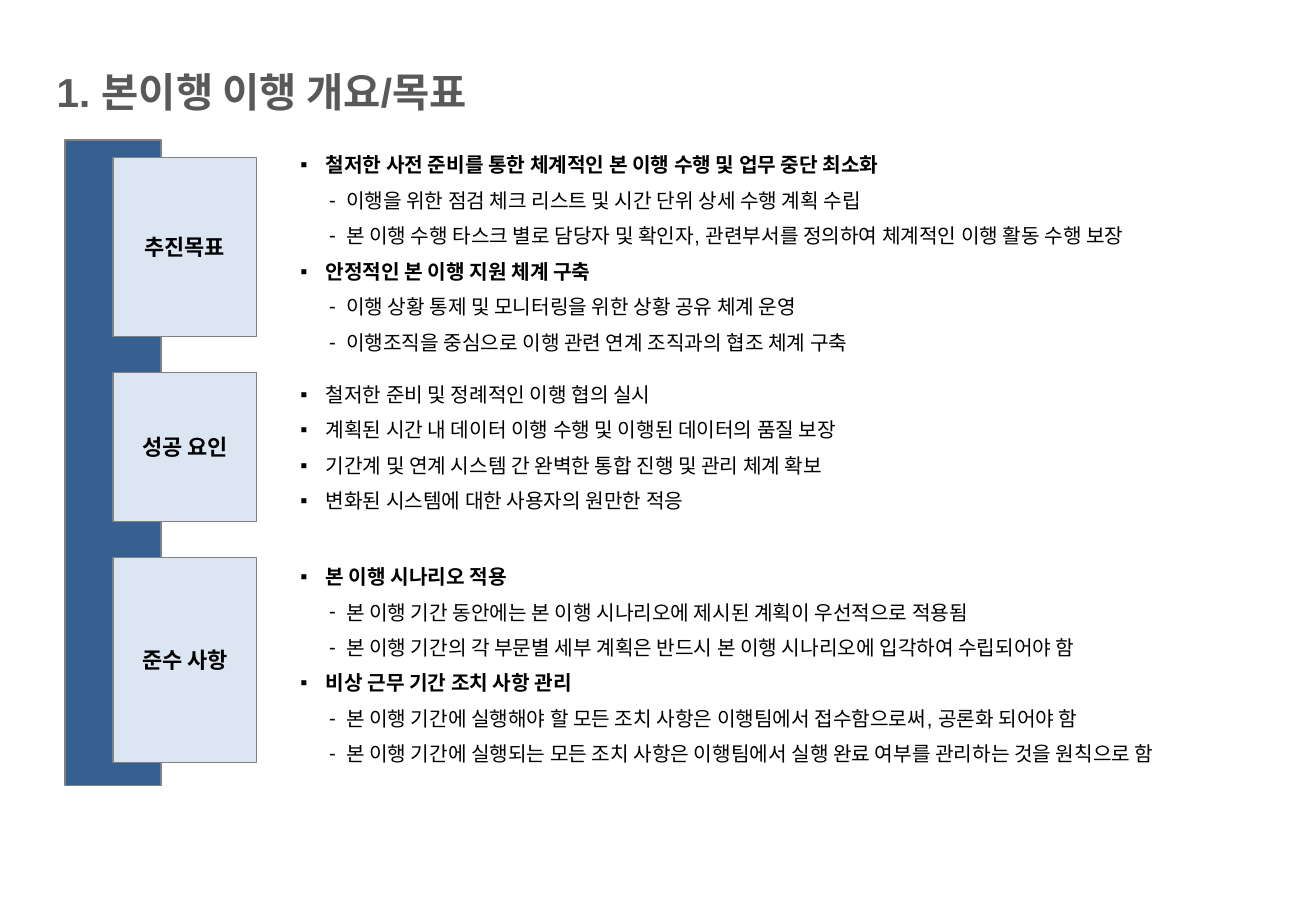
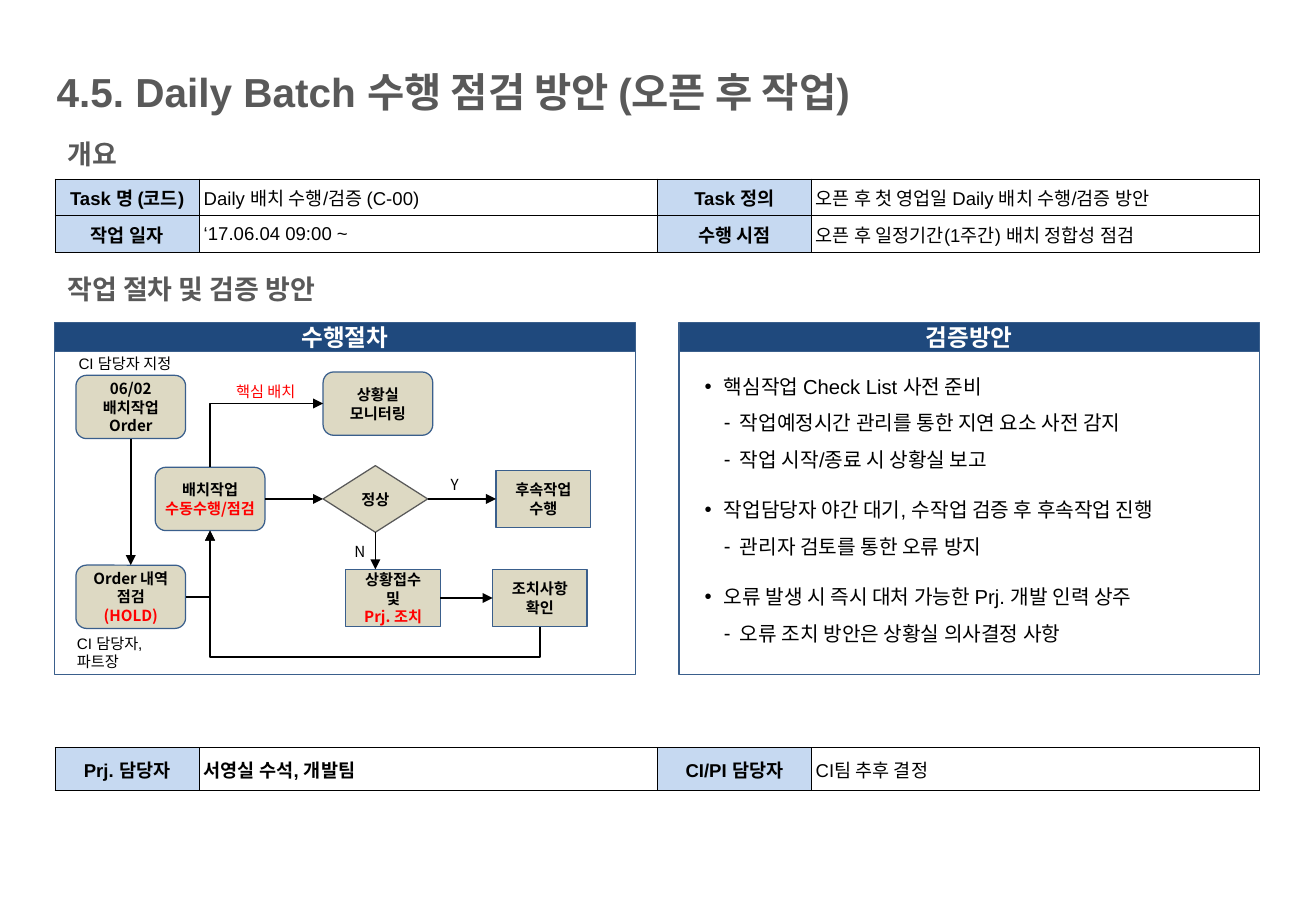
from pptx import Presentation
from pptx.dml.color import RGBColor
from pptx.enum.shapes import MSO_CONNECTOR, MSO_SHAPE
from pptx.enum.text import MSO_ANCHOR, PP_ALIGN
from pptx.oxml.ns import qn
from pptx.util import Pt
from lxml import etree

RECT, ROUND = MSO_SHAPE.RECTANGLE, MSO_SHAPE.ROUNDED_RECTANGLE
DECISION = MSO_SHAPE.FLOWCHART_DECISION
STRAIGHT, ELBOW = MSO_CONNECTOR.STRAIGHT, MSO_CONNECTOR.ELBOW
LEFT, CENTER = PP_ALIGN.LEFT, PP_ALIGN.CENTER
TOP, MIDDLE = MSO_ANCHOR.TOP, MSO_ANCHOR.MIDDLE
SIDE_TOP, SIDE_LEFT, SIDE_BOTTOM, SIDE_RIGHT = range(4)

BLACK = RGBColor(0x00, 0x00, 0x00)
WHITE = RGBColor(0xFF, 0xFF, 0xFF)
RED = RGBColor(0xFF, 0x00, 0x00)
HEADING = RGBColor(0x59, 0x59, 0x59)
GRAY = RGBColor(0x80, 0x80, 0x80)
BAND = RGBColor(0x37, 0x60, 0x92)
PALE_BLUE = RGBColor(0xDC, 0xE6, 0xF2)
LABEL_BLUE = RGBColor(0xC6, 0xD9, 0xF1)
NAVY = RGBColor(0x1F, 0x49, 0x7D)
OUTLINE = RGBColor(0x3A, 0x5F, 0x8C)
BEIGE = RGBColor(0xDD, 0xD9, 0xC3)

LATIN, KOREAN = "Arial", "Noto Sans CJK KR"
COLUMNS = (85.75, 271.5, 91.25, 265.5)
PANEL_W = 344

GOALS = [
    ("추진목표", 93.5, 106, 84, 130, [
        ("철저한 사전 준비를 통한 체계적인 본 이행 수행 및 업무 중단 최소화", [
            "이행을 위한 점검 체크 리스트 및 시간 단위 상세 수행 계획 수립",
            "본 이행 수행 타스크 별로 담당자 및 확인자, 관련부서를 정의하여 체계적인 이행 활동 수행 보장"]),
        ("안정적인 본 이행 지원 체계 구축", [
            "이행 상황 통제 및 모니터링을 위한 상황 공유 체계 운영",
            "이행조직을 중심으로 이행 관련 연계 조직과의 협조 체계 구축"])]),
    ("성공 요인", 221, 88, 220, 88, [
        ("철저한 준비 및 정례적인 이행 협의 실시", []),
        ("계획된 시간 내 데이터 이행 수행 및 이행된 데이터의 품질 보장", []),
        ("기간계 및 연계 시스템 간 완벽한 통합 진행 및 관리 체계 확보", []),
        ("변화된 시스템에 대한 사용자의 원만한 적응", [])]),
    ("준수 사항", 330.5, 121.5, 328, 130, [
        ("본 이행 시나리오 적용", [
            "본 이행 기간 동안에는 본 이행 시나리오에 제시된 계획이 우선적으로 적용됨",
            "본 이행 기간의 각 부문별 세부 계획은 반드시 본 이행 시나리오에 입각하여 수립되어야 함"]),
        ("비상 근무 기간 조치 사항 관리", [
            "본 이행 기간에 실행해야 할 모든 조치 사항은 이행팀에서 접수함으로써, 공론화 되어야 함",
            "본 이행 기간에 실행되는 모든 조치 사항은 이행팀에서 실행 완료 여부를 관리하는 것을 원칙으로 함"])]),
]

CHECKS = [
    ("핵심작업 Check List 사전 준비", [
        "작업예정시간 관리를 통한 지연 요소 사전 감지",
        "작업 시작/종료 시 상황실 보고"]),
    ("작업담당자 야간 대기, 수작업 검증 후 후속작업 진행", [
        "관리자 검토를 통한 오류 방지"]),
    ("오류 발생 시 즉시 대처 가능한 Prj. 개발 인력 상주", [
        "오류 조치 방안은 상황실 의사결정 사항"]),
]

TASK_ROWS = [
    ("Task 명 (코드)", "Daily 배치 수행/검증 (C-00)",
     "Task 정의", "오픈 후 첫 영업일 Daily 배치 수행/검증 방안"),
    ("작업 일자", "‘17.06.04 09:00 ~",
     "수행 시점", "오픈 후 일정기간(1주간) 배치 정합성 점검"),
]
OWNER_ROWS = [("Prj. 담당자", "서영실 수석, 개발팀", "CI/PI 담당자", "CI팀 추후 결정")]


def sub(parent, tag, **attrs):
    return etree.SubElement(parent, qn(tag), attrs)


def add_text(tf, text, size=12, color=BLACK, bold=False, font=LATIN, align=LEFT,
             spacing=None, before=0, after=0, bullet=None, margin=0, hang=0):
    """Add one formatted paragraph; the first in a frame gets no space before."""
    first = not tf.text
    p = tf.paragraphs[0] if first else tf.add_paragraph()
    p.alignment = align
    p.space_before, p.space_after = Pt(0 if first else before), Pt(after)
    if spacing:
        p.line_spacing = Pt(spacing)
    if bullet:
        pPr = p._p.get_or_add_pPr()
        pPr.set("marL", str(Pt(margin)))
        pPr.set("indent", str(Pt(-hang)))
        sub(pPr, "a:buFont", typeface=LATIN)
        sub(pPr, "a:buChar", char=bullet)
    r = p.add_run()
    r.text = text
    r.font.size, r.font.bold, r.font.name = Pt(size), bold, font
    r.font.color.rgb = color
    sub(r._r.get_or_add_rPr(), "a:ea", typeface=KOREAN)


def add_box(s, x, y, w, h, anchor=TOP):
    tf = s.shapes.add_textbox(Pt(x), Pt(y), Pt(w), Pt(h)).text_frame
    tf.word_wrap = True
    tf.vertical_anchor = anchor
    return tf


def add_label(s, x, y, w, text, **fmt):
    add_text(add_box(s, x, y, w, 18), text, size=9, spacing=11, **fmt)


def add_shape(s, kind, x, y, w, h, fill, line, width=0, side_inset=7.2):
    sp = s.shapes.add_shape(kind, Pt(x), Pt(y), Pt(w), Pt(h))
    sp.shadow.inherit = False
    sp.fill.solid()
    sp.fill.fore_color.rgb = fill
    sp.line.color.rgb = line
    sp.line.width = Pt(width)
    tf = sp.text_frame
    tf.word_wrap = True
    tf.vertical_anchor = MIDDLE
    tf.margin_left = tf.margin_right = Pt(side_inset)
    return sp


def add_node(s, kind, x, y, w, h, *lines, line=OUTLINE, width=0, side_inset=7.2):
    """Flowchart step; each line is (text, colour)."""
    sp = add_shape(s, kind, x, y, w, h, BEIGE, line, width, side_inset)
    for text, color in lines:
        add_text(sp.text_frame, text, size=9, color=color, bold=True,
                 font=KOREAN, align=CENTER, spacing=11)
    return sp


def add_arrow(s, start, start_side, end, end_side=None, kind=STRAIGHT):
    """Arrow between two shapes, or from a shape to an (x, y) point."""
    to_point = isinstance(end, tuple)
    x, y = end if to_point else (0, 0)
    c = s.shapes.add_connector(kind, Pt(x), Pt(y), Pt(x), Pt(y))
    c.begin_connect(start, start_side)
    if not to_point:
        c.end_connect(end, end_side)
    c.line.color.rgb = BLACK
    c.line.width = Pt(1)
    sub(c.line._get_or_add_ln(), "a:tailEnd", type="triangle")
    sub(c._element.spPr, "a:effectLst")
    return c


def add_elbow(s, start, start_side, end, end_side, preset, turned=False, flips="", adj=None):
    """Bent arrow; a turned one is rotated 90 degrees about its centre."""
    c = add_arrow(s, start, start_side, end, end_side, ELBOW)
    spPr = c._element.spPr
    xfrm = spPr.find(qn("a:xfrm"))
    if turned:
        x, y, w, h = c.left, c.top, c.width, c.height
        c.left, c.top = x + (w - h) // 2, y + (h - w) // 2
        c.width, c.height = h, w
        xfrm.set("rot", "5400000")
    xfrm.set("flipH", str(int("h" in flips)))
    xfrm.set("flipV", str(int("v" in flips)))
    geom = spPr.find(qn("a:prstGeom"))
    geom.set("prst", preset)
    if adj is not None:
        sub(geom.find(qn("a:avLst")), "a:gd", name="adj1", fmla=f"val {adj}")


def add_list(tf, groups, mark, margin, sub_margin, sub_hang, bold_heads=False,
             head_before=0, **fmt):
    """Bulleted heads, each followed by its dashed items."""
    for head, items in groups:
        add_text(tf, head, bold=bold_heads and bool(items), bullet=mark, margin=margin,
                 hang=margin if mark == "•" else 15, before=head_before, **fmt)
        for item in items:
            add_text(tf, item, bullet="-", margin=sub_margin, hang=sub_hang,
                     before=fmt.get("after", 0), **fmt)


def set_borders(cell):
    tcPr = cell._tc.get_or_add_tcPr()
    for i, edge in enumerate(("a:lnL", "a:lnR", "a:lnT", "a:lnB")):
        ln = etree.Element(qn(edge), w=str(Pt(0.25)))
        sub(sub(ln, "a:solidFill"), "a:srgbClr", val=str(BLACK))
        tcPr.insert(i, ln)


def add_info_table(s, y, row_h, rows, bold_values=()):
    """Label and value pairs; labels sit in the even columns."""
    table = s.shapes.add_table(len(rows), len(COLUMNS), Pt(32.5), Pt(y),
                               Pt(sum(COLUMNS)), Pt(row_h * len(rows))).table
    table.first_row = table.horz_banding = False
    for column, width in zip(table.columns, COLUMNS):
        column.width = Pt(width)
    for i, row in enumerate(rows):
        table.rows[i].height = Pt(row_h)
        for j, text in enumerate(row):
            cell, is_label = table.cell(i, j), j % 2 == 0
            cell.margin_left = cell.margin_right = Pt(2.5)
            cell.margin_top = cell.margin_bottom = Pt(2.5)
            cell.vertical_anchor = MIDDLE
            if is_label:
                cell.fill.solid()
                cell.fill.fore_color.rgb = LABEL_BLUE
            else:
                cell.fill.background()
            set_borders(cell)
            add_text(cell.text_frame, text, size=11, bold=is_label or text in bold_values,
                     align=CENTER if is_label else LEFT)


def add_slide(prs, title):
    s = prs.slides.add_slide(prs.slide_layouts[6])
    add_text(add_box(s, 26.5, 36, 670, 36, MIDDLE), title, size=24, color=HEADING, bold=True)
    return s


def add_section(s, y, text):
    add_text(add_box(s, 33, y, 547, 27), text, size=16, color=HEADING, bold=True, spacing=20)


def add_panel(s, x, title):
    add_shape(s, RECT, x, 208.5, PANEL_W, 191.5, WHITE, OUTLINE)
    header = add_shape(s, RECT, x, 191, PANEL_W, 17.5, NAVY, OUTLINE)
    add_text(header.text_frame, title, size=14, color=WHITE, bold=True,
             font=KOREAN, align=CENTER)


def build_goals(prs):
    s = add_slide(prs, "1. 본이행 이행 개요/목표")
    add_shape(s, RECT, 38.5, 83, 57, 382.5, BAND, GRAY, 0.75)
    for name, y, h, list_y, list_h, groups in GOALS:
        sp = add_shape(s, RECT, 67, y, 85, h, PALE_BLUE, GRAY, 0.75)
        add_text(sp.text_frame, name, size=13, bold=True, align=CENTER)
        add_list(add_box(s, 163.5, list_y, 594, list_h, MIDDLE), groups, "▪", 22.5, 34.5, 10,
                 bold_heads=True, head_before=2, spacing=17, after=2)


def build_flow(s):
    # Steps
    order = add_node(s, ROUND, 45, 222.5, 65, 37.5, ("06/02 배치작업 Order", BLACK))
    hold = add_node(s, ROUND, 45, 335, 65, 37.5, ("Order 내역 점검", BLACK), ("(HOLD)", RED))
    batch = add_node(s, ROUND, 92, 277, 65, 37.5, ("배치작업", BLACK),
                     ("수동수행/점검", RED), side_inset=0)
    monitor = add_node(s, ROUND, 191.5, 220.5, 65, 37.5, ("상황실", BLACK), ("모니터링", BLACK))
    normal = add_node(s, DECISION, 191.5, 276, 62, 39.5, ("정상", BLACK),
                      line=HEADING, width=0.75, side_inset=0)
    follow = add_node(s, RECT, 294, 278.75, 56, 34, ("후속작업", BLACK), ("수행", BLACK))
    receive = add_node(s, RECT, 205, 337.5, 56, 34, ("상황접수", BLACK), ("및", BLACK),
                       ("Prj. 조치", RED))
    confirm = add_node(s, RECT, 292, 337.5, 56, 34, ("조치사항", BLACK), ("확인", BLACK))

    # Arrows
    add_arrow(s, order, SIDE_BOTTOM, hold, SIDE_TOP)
    add_arrow(s, batch, SIDE_RIGHT, normal, SIDE_LEFT)
    add_arrow(s, normal, SIDE_RIGHT, follow, SIDE_LEFT)
    add_arrow(s, normal, SIDE_BOTTOM, (222.5, 337.5))
    add_arrow(s, receive, SIDE_RIGHT, confirm, SIDE_LEFT)
    add_elbow(s, hold, SIDE_RIGHT, batch, SIDE_BOTTOM, "bentConnector2", flips="v")
    add_elbow(s, confirm, SIDE_BOTTOM, batch, SIDE_BOTTOM, "bentConnector3",
              turned=True, flips="h", adj=-31500)
    add_elbow(s, batch, SIDE_TOP, monitor, SIDE_LEFT, "bentConnector2", turned=True, flips="hv")

    # Labels
    add_label(s, 39.5, 206.5, 86, "CI 담당자 지정")
    add_label(s, 38.5, 372, 65, "CI 담당자,파트장")
    add_label(s, 124.5, 223, 66, "핵심 배치", color=RED, align=CENTER)
    add_label(s, 260, 278, 17, "Y", font=KOREAN)
    add_label(s, 203, 317.5, 17, "N", font=KOREAN)


def build_batch_check(prs):
    s = add_slide(prs, "4.5. Daily Batch 수행 점검 방안 (오픈 후 작업)")
    add_section(s, 77, "개요")
    add_info_table(s, 106, 21.75, TASK_ROWS)
    add_section(s, 157, "작업 절차 및 검증 방안")
    add_panel(s, 32.5, "수행절차")
    build_flow(s)
    add_panel(s, 402.5, "검증방안")
    add_list(add_box(s, 410.5, 211, 339, 178), CHECKS, "•", 11.5, 21, 9.5,
             head_before=8.4, spacing=21.6)
    add_info_table(s, 443, 25.5, OWNER_ROWS, bold_values=("서영실 수석, 개발팀",))


def main():
    prs = Presentation()
    prs.slide_width, prs.slide_height = Pt(780), Pt(540)
    build_goals(prs)
    build_batch_check(prs)
    prs.save("out.pptx")


if __name__ == "__main__":
    main()
